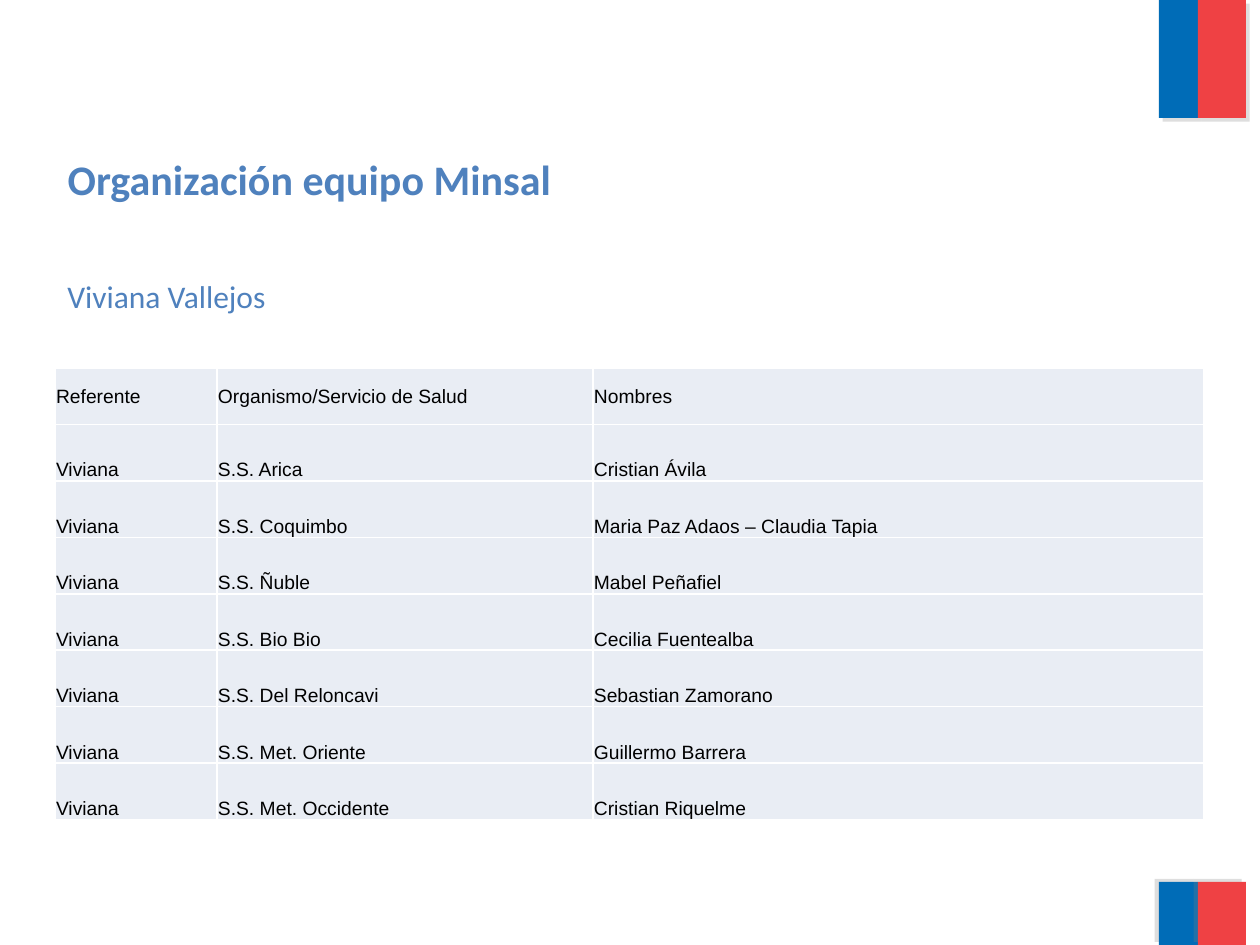
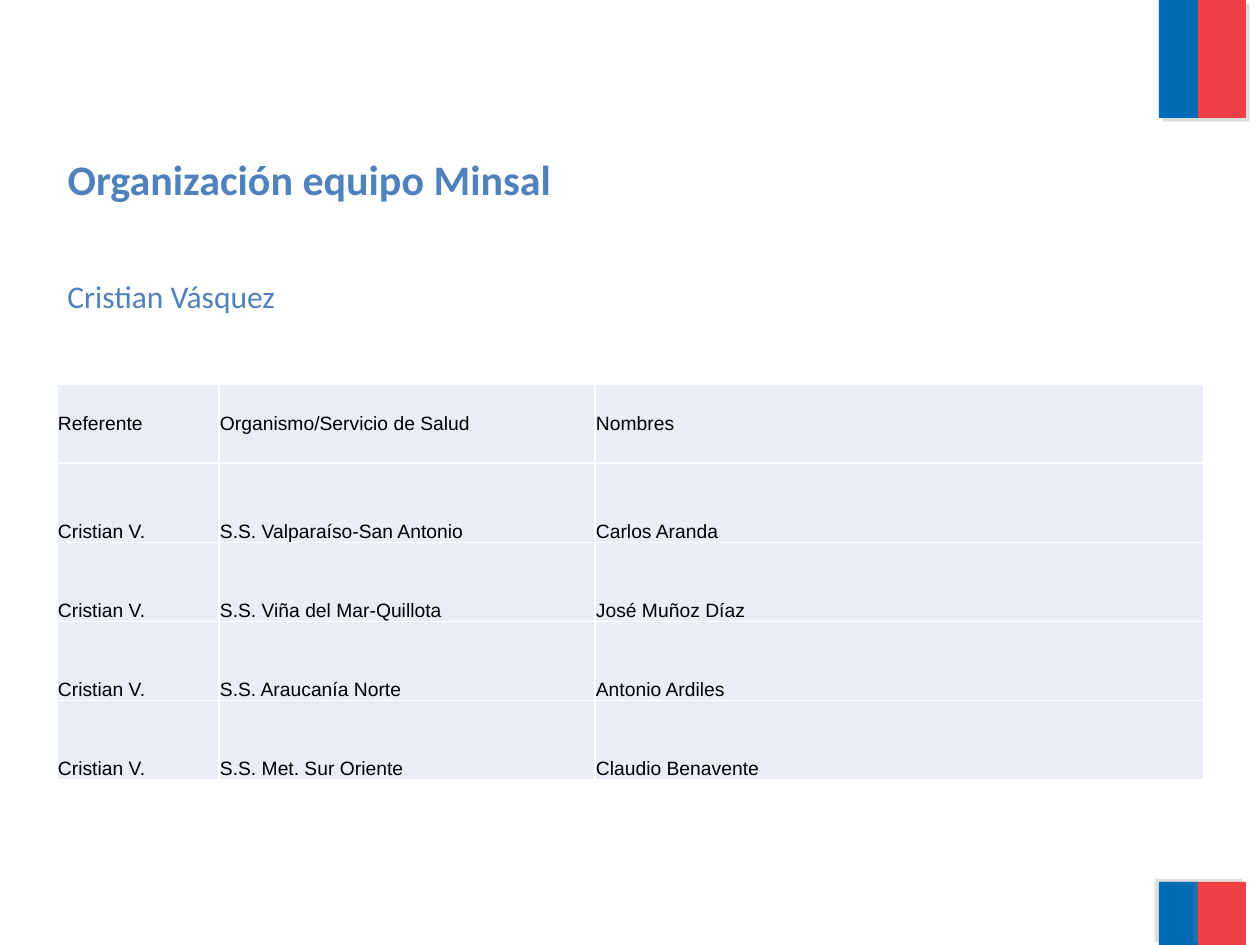
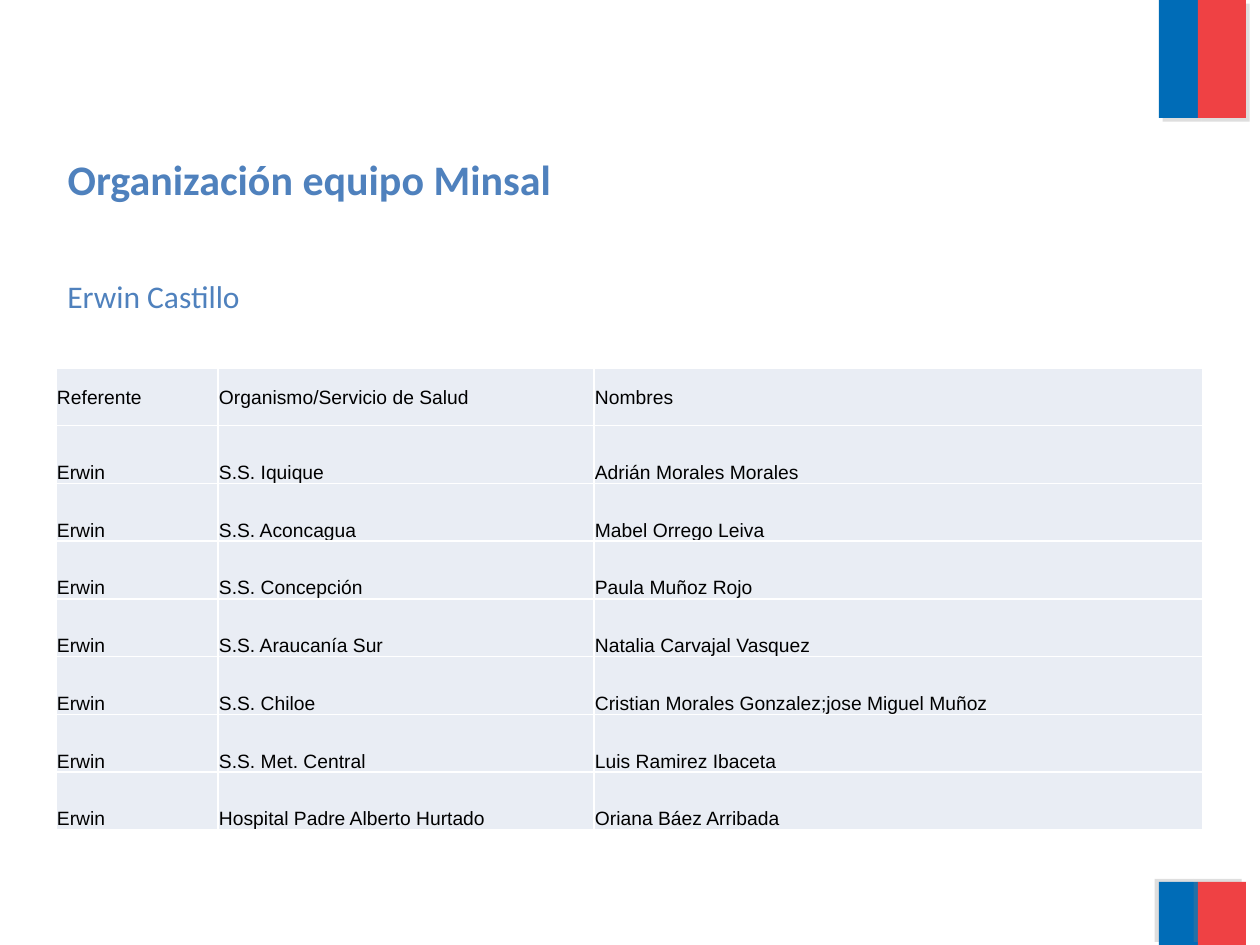
from dataclasses import dataclass
from typing import NamedTuple

from lxml.etree import SubElement
from pptx import Presentation
from pptx.dml.color import RGBColor
from pptx.enum.shapes import MSO_SHAPE
from pptx.enum.text import MSO_ANCHOR, PP_ALIGN
from pptx.oxml.ns import qn
from pptx.util import Emu, Pt

PX_PER_INCH = 126


def px(n):
    return Emu(round(n * 914400 / PX_PER_INCH))


class Box(NamedTuple):
    x: int
    y: int
    w: int
    h: int

    def emu(self):
        return [px(n) for n in self]


@dataclass(frozen=True)
class Theme:
    blue: str = "006CB7"
    red: str = "EF4144"
    shadow: str = "808080"
    heading: str = "4F81BD"
    cell: str = "E9EDF4"
    border: str = "FFFFFF"
    text: str = "000000"
    heading_font: str = "Calibri"
    table_font: str = "Arial"
    title_size: int = 24
    subtitle_size: int = 18
    table_size: int = 11
    border_width: int = 1
    shadow_distance: int = 3


THEME = Theme()
TITLE = "Organización equipo Minsal"
TITLE_BOX = Box(55, 147, 1148, 103)
SUBTITLE_BOX = Box(55, 271, 1148, 53)
TOP_FLAG = Box(1159, 0, 87, 118)
BOTTOM_FLAG = Box(1159, 882, 87, 63)
BLUE_WIDTH = 39
REFERENT_WIDTH, SERVICE_WIDTH = 162, 376
HEADER = ("Referente", "Organismo/Servicio de Salud", "Nombres")

TEAMS = [
    ("Viviana Vallejos", "Viviana", Box(55, 368, 1149, 452), [
        ("S.S. Arica", "Cristian Ávila"),
        ("S.S. Coquimbo", "Maria Paz Adaos – Claudia Tapia"),
        ("S.S. Ñuble", "Mabel Peñafiel"),
        ("S.S. Bio Bio", "Cecilia Fuentealba"),
        ("S.S. Del Reloncavi", "Sebastian Zamorano"),
        ("S.S. Met. Oriente", "Guillermo Barrera"),
        ("S.S. Met. Occidente", "Cristian Riquelme"),
    ]),
    ("Cristian Vásquez", "Cristian V.", Box(57, 384, 1147, 396), [
        ("S.S. Valparaíso-San Antonio", "Carlos Aranda"),
        ("S.S. Viña del Mar-Quillota", "José Muñoz Díaz"),
        ("S.S. Araucanía Norte", "Antonio Ardiles"),
        ("S.S. Met. Sur Oriente", "Claudio Benavente"),
    ]),
    ("Erwin Castillo", "Erwin", Box(56, 368, 1147, 462), [
        ("S.S. Iquique", "Adrián Morales Morales"),
        ("S.S. Aconcagua", "Mabel Orrego Leiva"),
        ("S.S. Concepción", "Paula Muñoz Rojo"),
        ("S.S. Araucanía Sur", "Natalia Carvajal Vasquez"),
        ("S.S. Chiloe", "Cristian Morales Gonzalez;jose Miguel Muñoz"),
        ("S.S. Met. Central", "Luis Ramirez Ibaceta"),
        ("Hospital Padre Alberto Hurtado", "Oriana Báez Arribada"),
    ]),
]


def add_color(parent, color):
    return SubElement(parent, qn("a:srgbClr"), val=color)


def add_shadow(sp, angle):
    sp.shadow.inherit = False
    effects = sp.element.spPr.find(qn("a:effectLst"))
    shadow = SubElement(
        effects, qn("a:outerShdw"), blurRad="0",
        dist=str(Pt(THEME.shadow_distance)), dir=str(angle * 60000),
        algn="ctr", rotWithShape="0")
    SubElement(add_color(shadow, THEME.shadow), qn("a:alpha"), val="25000")


def add_flag(s, box, angle):
    stripes = (
        (THEME.blue, box._replace(w=BLUE_WIDTH)),
        (THEME.red, box._replace(x=box.x + BLUE_WIDTH, w=box.w - BLUE_WIDTH)),
    )
    for color, stripe in stripes:
        sp = s.shapes.add_shape(MSO_SHAPE.RECTANGLE, *stripe.emu())
        sp.fill.solid()
        sp.fill.fore_color.rgb = RGBColor.from_string(color)
        sp.line.fill.background()
        add_shadow(sp, angle)


def format_text(tf, font, size, color, bold=False):
    tf.word_wrap = True
    p = tf.paragraphs[0]
    p.alignment = PP_ALIGN.LEFT
    f = p.runs[0].font
    f.name, f.size, f.bold = font, Pt(size), bold
    f.color.rgb = RGBColor.from_string(color)


def add_heading(sp, box, text, size, bold=False):
    sp.left, sp.top, sp.width, sp.height = box.emu()
    tf = sp.text_frame
    tf.text = text
    tf.vertical_anchor = MSO_ANCHOR.TOP
    format_text(tf, THEME.heading_font, size, THEME.heading, bold)


def add_borders(cell):
    tc_pr = cell._tc.get_or_add_tcPr()
    for side in ("lnL", "lnR", "lnT", "lnB"):
        ln = SubElement(tc_pr, qn(f"a:{side}"), w=str(Pt(THEME.border_width)))
        add_color(SubElement(ln, qn("a:solidFill")), THEME.border)


def format_cell(cell, text, anchor):
    cell.text = text
    cell.vertical_anchor = anchor
    cell.margin_left = cell.margin_right = cell.margin_top = px(1)
    cell.margin_bottom = 0
    add_borders(cell)
    cell.fill.solid()
    cell.fill.fore_color.rgb = RGBColor.from_string(THEME.cell)
    format_text(cell.text_frame, THEME.table_font, THEME.table_size, THEME.text)


def add_team_table(s, box, referent, members):
    rows = [HEADER] + [(referent, *member) for member in members]
    table = s.shapes.add_table(len(rows), len(HEADER), *box.emu()).table
    table.first_row = table.horz_banding = False
    names_width = box.w - REFERENT_WIDTH - SERVICE_WIDTH
    widths = (REFERENT_WIDTH, SERVICE_WIDTH, names_width)
    for column, width in zip(table.columns, widths):
        column.width = px(width)
    for i, row in enumerate(rows):
        anchor = MSO_ANCHOR.BOTTOM if i else MSO_ANCHOR.MIDDLE
        for j, text in enumerate(row):
            format_cell(table.cell(i, j), text, anchor)


def add_team_slide(prs, leader, referent, table_box, members):
    s = prs.slides.add_slide(prs.slide_layouts[5])
    add_flag(s, TOP_FLAG, 45)
    add_flag(s, BOTTOM_FLAG, 215)
    add_team_table(s, table_box, referent, members)
    add_heading(s.shapes.title, TITLE_BOX, TITLE, THEME.title_size, True)
    subtitle = s.shapes.add_textbox(*SUBTITLE_BOX.emu())
    add_heading(subtitle, SUBTITLE_BOX, leader, THEME.subtitle_size)


def main():
    prs = Presentation()
    prs.slide_width, prs.slide_height = px(1260), px(945)
    for team in TEAMS:
        add_team_slide(prs, *team)
    prs.save("out.pptx")


if __name__ == "__main__":
    main()
